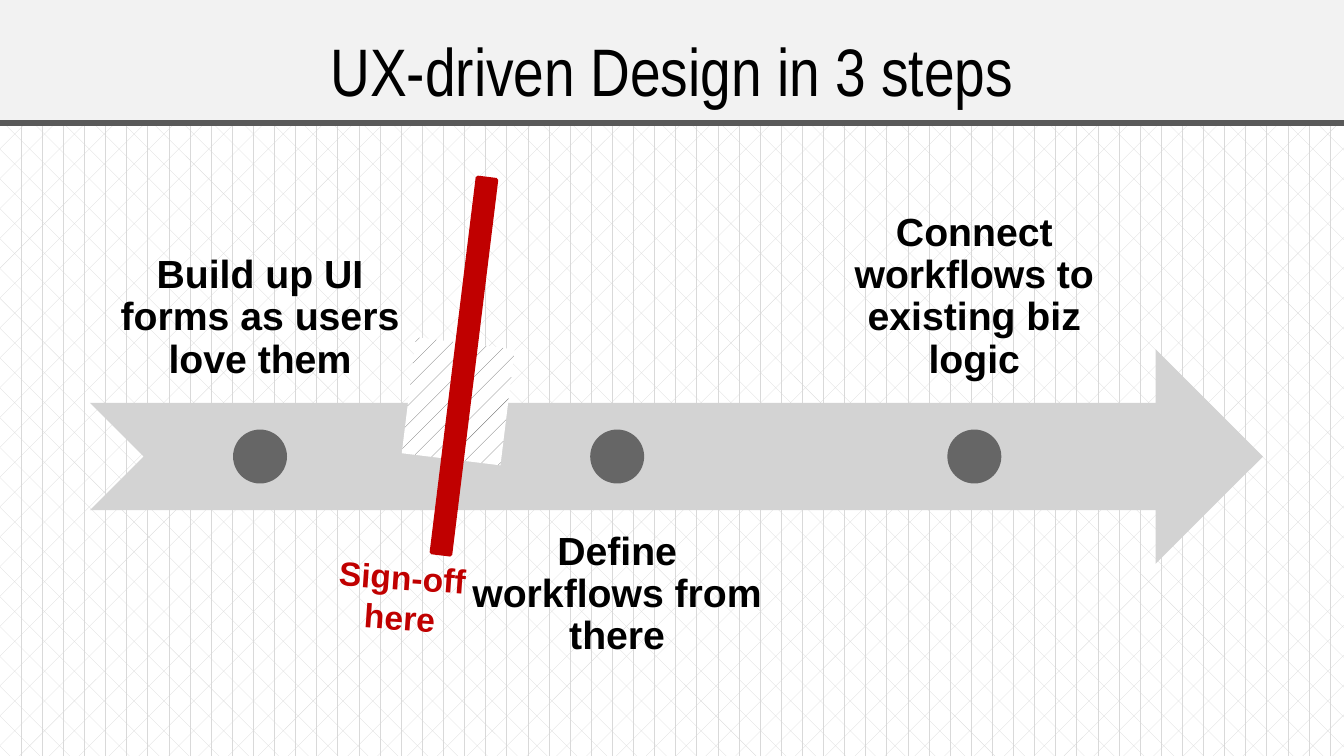
import pptx
import pptx.dml.color
import pptx.enum.dml
import pptx.enum.shapes
import pptx.enum.text
import pptx.util

Cm = pptx.util.Cm
Pt = pptx.util.Pt
RGBColor = pptx.dml.color.RGBColor
SHAPE = pptx.enum.shapes.MSO_SHAPE
PATTERN = pptx.enum.dml.MSO_PATTERN
ANCHOR = pptx.enum.text.MSO_ANCHOR

BLACK = RGBColor(0x00, 0x00, 0x00)
WHITE = RGBColor(0xFF, 0xFF, 0xFF)
TITLE_FILL = RGBColor(0xF2, 0xF2, 0xF2)
TITLE_LINE = RGBColor(0x59, 0x59, 0x59)
PAPER_GRAY = RGBColor(0xD9, 0xD9, 0xD9)
ARROW_GRAY = RGBColor(0xD3, 0xD3, 0xD3)
DOT_GRAY = RGBColor(0x66, 0x66, 0x66)
RED = RGBColor(0xC0, 0x00, 0x00)

STEPS = [
    "Build up UI forms as users love them",
    "Define workflows from there",
    "Connect workflows to existing biz logic",
]


def set_pattern(fill, pattern, fore):
    fill.patterned()
    fill.pattern = pattern
    fill.fore_color.rgb = fore
    fill.back_color.rgb = WHITE


def add_shape(slide, kind, box, color, line=None, line_width=0):
    sp = slide.shapes.add_shape(kind, *map(Cm, box))
    sp.shadow.inherit = False
    sp.fill.solid()
    sp.fill.fore_color.rgb = color
    if line is None:
        sp.line.fill.background()
    else:
        sp.line.color.rgb = line
        sp.line.width = Pt(line_width)
    return sp


def write(sp, lines, size, color, font="Arial", bold=True, anchor=ANCHOR.TOP,
          inset=(0.25, 0.13), spacing=None, wrap=True):
    """Fill a shape with centred lines; inset is (horizontal, vertical) in cm."""
    tf = sp.text_frame
    tf.word_wrap = wrap
    tf.vertical_anchor = anchor
    tf.margin_left = tf.margin_right = Cm(inset[0])
    tf.margin_top = tf.margin_bottom = Cm(inset[1])
    tf.text = "\n".join(lines)
    for p in tf.paragraphs:
        p.alignment = pptx.enum.text.PP_ALIGN.CENTER
        p.line_spacing = spacing
        p.font.name = font
        p.font.size = Pt(size)
        p.font.bold = bold
        p.font.color.rgb = color


def add_title(slide, box, text):
    sp = add_shape(slide, SHAPE.RECTANGLE, box, TITLE_FILL, TITLE_LINE, 3)
    write(sp, [text], 36, BLACK, "Arial Narrow", False, ANCHOR.BOTTOM, (0.25, 0.25))


def add_timeline(slide, box, steps):
    """Draw an arrow with one dot per step and labels alternating above and below."""
    left, top, width, height = box
    label_w, pitch, dot = 6.43, 6.75, 1.02
    middle = top + height / 2
    add_shape(slide, SHAPE.NOTCHED_RIGHT_ARROW, box, ARROW_GRAY)
    for i, step in enumerate(steps):
        x = left + i * pitch
        above = i % 2 == 0
        y = top - 0.75 * height if above else top + 0.75 * height
        label = slide.shapes.add_textbox(Cm(x), Cm(y), Cm(label_w), Cm(height))
        write(label, [step], 21, BLACK, anchor=ANCHOR.BOTTOM if above else ANCHOR.TOP,
              inset=(0.4, 0.4), spacing=0.9)
        add_shape(slide, SHAPE.OVAL,
                  (x + (label_w - dot) / 2, middle - dot / 2, dot, dot), DOT_GRAY)


def add_sign_off(slide, box):
    """Draw the tilted red bar over a hatched patch, with its caption below."""
    left, top, width, height = box
    patch = add_shape(slide, SHAPE.RECTANGLE, (left + 1.7, top + 3.13, 1.88, 2.21), WHITE)
    set_pattern(patch.fill, PATTERN.PERCENT_5, DOT_GRAY)
    bar = add_shape(slide, SHAPE.RECTANGLE, (left + 2.57, top, 0.36, 7.14), RED, RED, 2)
    patch.rotation = bar.rotation = 7

    caption_h = 1.8
    caption = slide.shapes.add_textbox(
        Cm(left), Cm(top + height - caption_h), Cm(width), Cm(caption_h))
    caption.rotation = 3.9
    write(caption, ["Sign-off", "here"], 18, RED, wrap=False)


def main():
    prs = pptx.Presentation()
    prs.slide_width, prs.slide_height = Cm(25.4), Cm(14.29)
    slide = prs.slides.add_slide(prs.slide_layouts[6])
    set_pattern(slide.background.fill, PATTERN.DIVOT, PAPER_GRAY)
    add_timeline(slide, (1.7, 6.6, 22.17, 4.06), STEPS)
    add_sign_off(slide, (6.02, 3.35, 3.12, 8.84))
    add_title(slide, (-0.43, -0.27, 26.26, 2.6), "UX-driven Design in 3 steps")
    prs.save("out.pptx")


if __name__ == "__main__":
    main()
